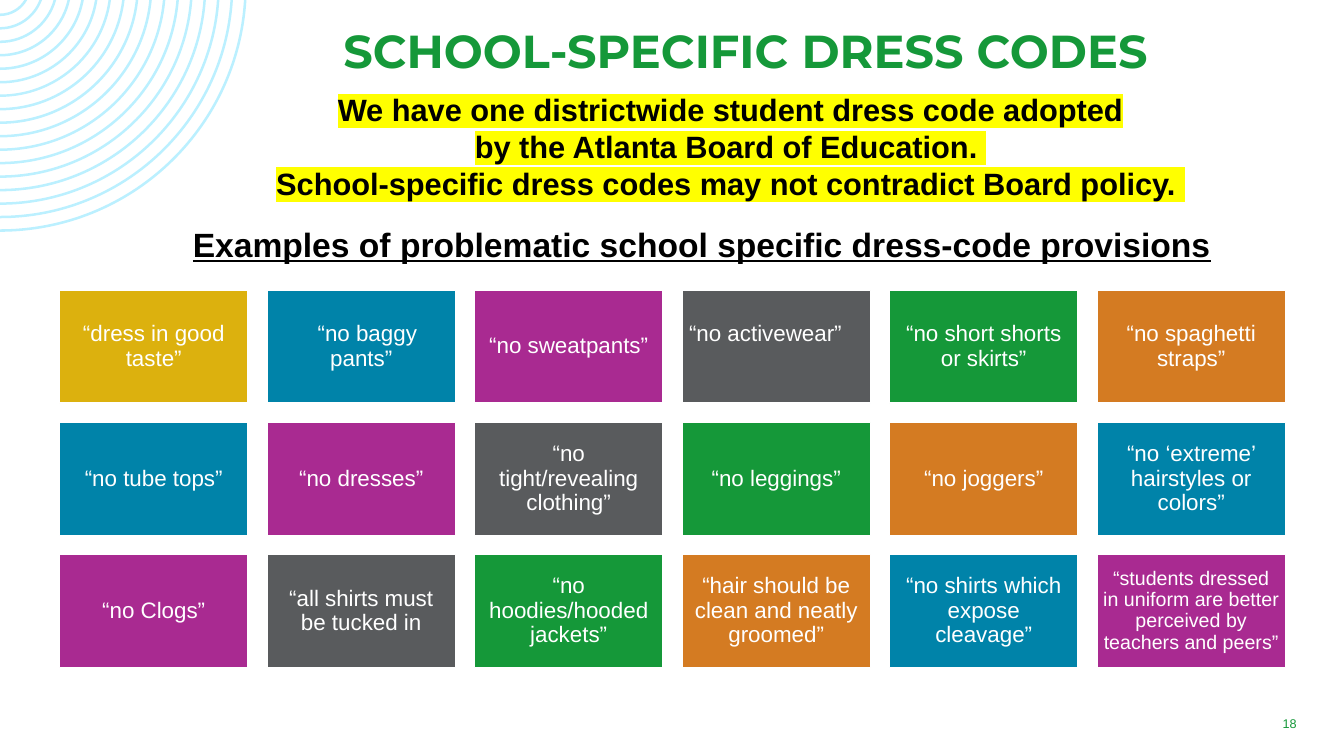
from math import asin, cos, pi, sin, tan

from lxml.etree import Element, SubElement
from pptx import Presentation
from pptx.dml.color import RGBColor
from pptx.enum.shapes import MSO_SHAPE as Shape
from pptx.enum.text import MSO_ANCHOR as Anchor, PP_ALIGN as Align
from pptx.oxml.ns import qn
from pptx.util import Inches, Pt

WHITE = RGBColor(0xFF, 0xFF, 0xFF)
BLACK = RGBColor(0x00, 0x00, 0x00)
YELLOW = RGBColor(0xFF, 0xFF, 0x00)
SKY = RGBColor(0xBB, 0xF0, 0xFF)
GOLD = RGBColor(0xDC, 0xB1, 0x0E)
BLUE = RGBColor(0x00, 0x83, 0xA9)
PURPLE = RGBColor(0xA9, 0x2A, 0x91)
GRAY = RGBColor(0x59, 0x5B, 0x5D)
GREEN = RGBColor(0x15, 0x98, 0x39)
ORANGE = RGBColor(0xD4, 0x7B, 0x22)
TILE_CYCLE = [BLUE, PURPLE, GRAY, GREEN, ORANGE]

UNITS = 1000  # freeform units in an inch
COLUMNS, ROWS = 6, 3
TILE_WIDTH, TILE_HEIGHT = 1.87, 1.12
PROVISIONS = [
    "“dress in good taste”", "“no baggy pants”", "“no sweatpants”",
    "“no activewear”", "“no short shorts or skirts”", "“no spaghetti straps”",
    "“no tube tops”", "“no dresses”", "“no tight/revealing clothing”",
    "“no leggings”", "“no joggers”", "“no ‘extreme’ hairstyles or colors”",
    "“no Clogs”", "“all shirts must be tucked in", "“no hoodies/hooded jackets”",
    "“hair should be clean and neatly groomed”", "“no shirts which expose cleavage”",
    "“students dressed in uniform are better perceived by teachers and peers”",
]
POLICY = [
    "We have one districtwide student dress code adopted",
    "by the Atlanta Board of Education. ",
    "School-specific dress codes may not contradict Board policy. ",
]


def format_text(frame, size, color, bold=False, font="Arial"):
    for para in frame.paragraphs:
        para.alignment = Align.CENTER
        for span in para.runs:
            span.font.size = Pt(size)
            span.font.name = font
            span.font.bold = bold
            span.font.color.rgb = color


def add_label(page, box, text, size, color, anchor=Anchor.TOP, **style):
    frame = page.shapes.add_textbox(*map(Inches, box)).text_frame
    frame.word_wrap = True
    frame.vertical_anchor = anchor
    frame.text = text
    format_text(frame, size, color, **style)
    return frame


def highlight(frame, color):
    for para in frame.paragraphs:
        for span in para.runs:
            properties = span.font._element
            mark = Element(qn("a:highlight"))
            SubElement(mark, qn("a:srgbClr"), val=str(color))
            properties.find(qn("a:solidFill")).addnext(mark)


def quarter_curve(radius, center_y):
    """Bezier points from the slide's top edge to its left edge."""
    start = asin(-center_y / radius)
    reach = radius * 4 / 3 * tan((pi / 2 - start) / 4)
    x, y = radius * cos(start), radius * sin(start)
    bottom = center_y + radius
    return [(x, 0), (x - reach * sin(start), center_y + y + reach * cos(start)),
            (reach, bottom), (0, bottom)]


def bend(segment, controls):
    """Turn a straight segment into a curve with two control points."""
    segment.tag = qn("a:cubicBezTo")
    for index, (x, y) in enumerate(controls):
        point = Element(qn("a:pt"), x=str(round(x * UNITS)), y=str(round(y * UNITS)))
        segment.insert(index, point)


def add_corner_rings(page, outer=2.45, inner=0.31, count=17, band=0.025, center_y=-0.15):
    gap = (outer - inner) / (count - 1)
    rings = []
    for index in range(count):
        radius = outer - gap * index
        rings.append(quarter_curve(radius, center_y)
                     + quarter_curve(radius - band, center_y)[::-1])
    builder = None
    for ring in rings:
        corners = [(x * UNITS, y * UNITS) for x, y in (ring[0], ring[3], ring[4], ring[7])]
        if builder is None:
            builder = page.shapes.build_freeform(*corners[0], scale=Inches(1) / UNITS)
        else:
            builder.move_to(*corners[0])
        builder.add_line_segments(corners[1:], close=True)
    shape = builder.convert_to_shape()
    segments = list(shape._element.iter(qn("a:lnTo")))
    for index, ring in enumerate(rings):
        bend(segments[3 * index], ring[1:3])
        bend(segments[3 * index + 2], ring[5:7])
    shape.shadow.inherit = False
    shape.fill.solid()
    shape.fill.fore_color.rgb = SKY
    shape.line.fill.background()


def add_tile(page, left, top, text, color, size, margin):
    tile = page.shapes.add_shape(Shape.RECTANGLE, Inches(left), Inches(top),
                                 Inches(TILE_WIDTH), Inches(TILE_HEIGHT))
    tile.shadow.inherit = False
    tile.fill.solid()
    tile.fill.fore_color.rgb = color
    tile.line.color.rgb = WHITE
    tile.line.width = Pt(1)
    frame = tile.text_frame
    frame.word_wrap = True
    frame.vertical_anchor = Anchor.MIDDLE
    frame.margin_left = frame.margin_right = Inches(margin)
    frame.margin_top = frame.margin_bottom = Inches(margin)
    frame.text = text
    format_text(frame, size, WHITE)
    frame.paragraphs[0].line_spacing = 0.9
    return frame


def add_provisions(page, box):
    left, top, width, height = box
    column_pitch = (width - TILE_WIDTH) / (COLUMNS - 1)
    row_pitch = (height - TILE_HEIGHT) / (ROWS - 1)
    frames = []
    for index, text in enumerate(PROVISIONS):
        row, column = divmod(index, COLUMNS)
        color = TILE_CYCLE[(index - 1) % len(TILE_CYCLE)] if index else GOLD
        size, margin = (14, 0.06) if len(text) > 60 else (16, 0.07)
        frames.append(add_tile(page, left + column * column_pitch,
                               top + row * row_pitch, text, color, size, margin))
    baggy, activewear = frames[1], frames[3]
    baggy.paragraphs[0]._p.get_or_add_pPr().set("indent", str(Inches(0.12)))
    activewear.paragraphs[0].alignment = Align.LEFT
    activewear.margin_bottom = Inches(0.31)


def add_headings(page):
    add_label(page, (1.56, 0.17, 11.67, 0.84), "SCHOOL-SPECIFIC DRESS CODES",
              33, GREEN, bold=True, font="Montserrat")
    policy = add_label(page, (1.7, 0.85, 11.09, 1.21), "\n".join(POLICY),
                       22, BLACK, bold=True)
    highlight(policy, YELLOW)
    examples = add_label(page, (0.88, 2.17, 12.16, 0.5),
                         "Examples of problematic school specific dress-code provisions",
                         24, BLACK, bold=True)
    examples.paragraphs[0].runs[0].font.underline = True


def main():
    deck = Presentation()
    deck.slide_width, deck.slide_height = Inches(13.33), Inches(7.5)
    page = deck.slides.add_slide(deck.slide_layouts[6])
    add_corner_rings(page)
    add_headings(page)
    add_provisions(page, (0.59, 2.88, 12.16, 3.74))
    add_label(page, (12.25, 7.03, 1.08, 0.3), "18", 9, GREEN, anchor=Anchor.MIDDLE)
    deck.save("out.pptx")


if __name__ == "__main__":
    main()
